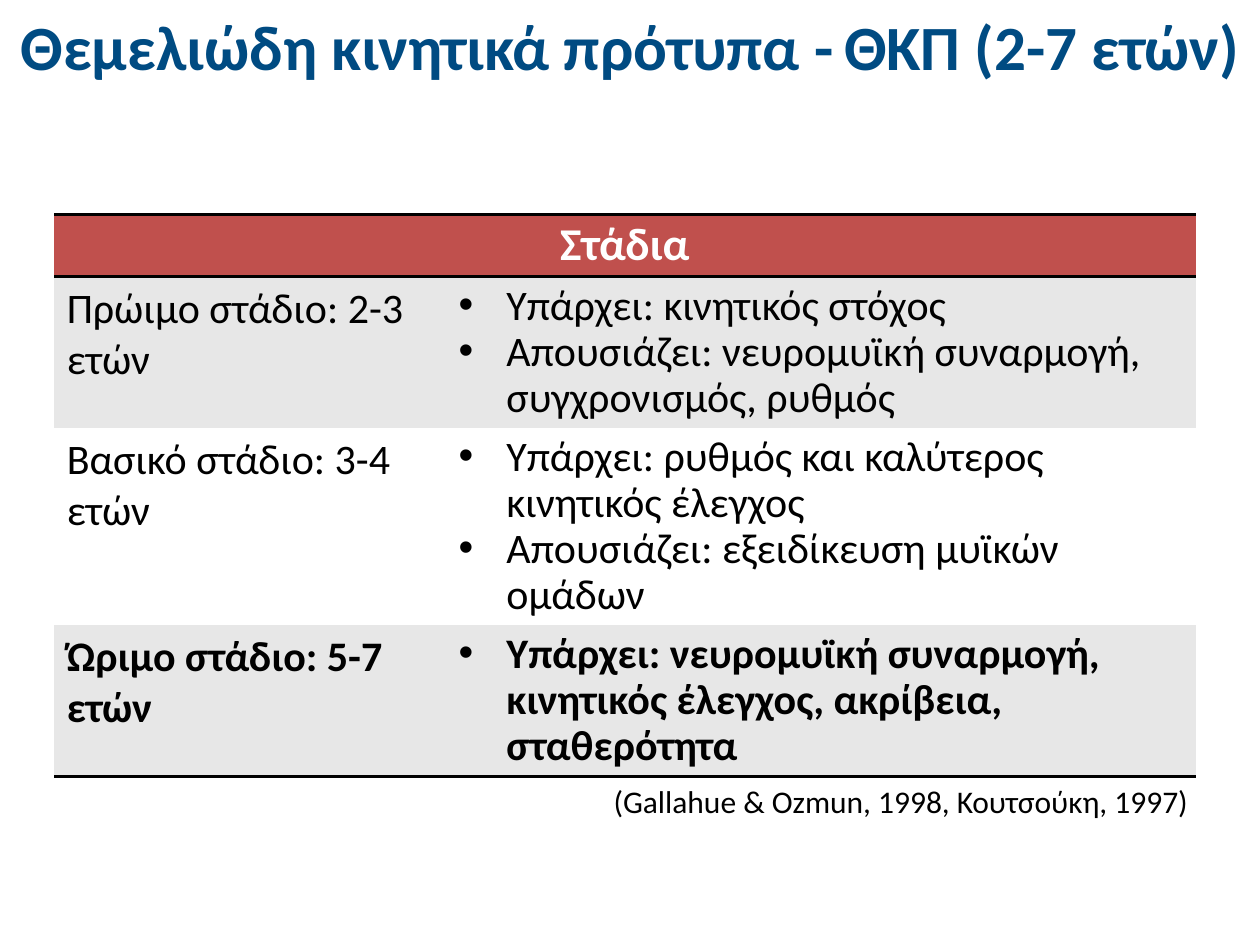
from pptx import Presentation
from pptx.dml.color import RGBColor
from pptx.enum import text as txt
from pptx.oxml import parse_xml
from pptx.oxml.ns import nsdecls
from pptx.util import Inches, Pt

# Content
TITLE = [("Θεμελιώδη κινητικά πρότυπα -", 36), (" ", 25.2), ("ΘΚΠ (2-7 ετών)", 36)]
HEADER = "Στάδια"
STAGES = [
    {"stage": "Πρώιμο στάδιο: 2-3 ετών", "height": 1.05, "traits": [
        "Υπάρχει: κινητικός στόχος",
        "Απουσιάζει: νευρομυϊκή συναρμογή, συγχρονισμός, ρυθμός"]},
    {"stage": "Βασικό στάδιο: 3-4 ετών", "height": 1.37, "traits": [
        "Υπάρχει: ρυθμός και καλύτερος κινητικός έλεγχος",
        "Απουσιάζει: εξειδίκευση μυϊκών ομάδων"]},
    {"stage": "Ώριμο στάδιο: 5-7 ετών", "height": 1.2, "bold": True, "traits": [
        "Υπάρχει: νευρομυϊκή συναρμογή, κινητικός έλεγχος, ακρίβεια, σταθερότητα"]},
]
CITATION = "(Gallahue & Ozmun, 1998, Κουτσούκη, 1997)"

THEME = {
    "font": "Calibri",
    "title": "004B82", "text": "000000", "header_text": "FFFFFF",
    "header_fill": "C0504D", "bands": ("E7E7E7", "FFFFFF"), "rule": "000000",
    "header_size": 26, "cell_size": 24, "citation_size": 18,
    "rule_width": 2, "tight": 0.9, "indent": 0.38,
}
COLUMNS = (3.11, 5.95)
HEADER_HEIGHT = 0.44
PLAIN_TABLE = "{2D5ABB26-0587-4C30-8999-92F81FD0307C}"
ALIGN = txt.PP_ALIGN


def write(frame, paragraphs, *, size=None, color=THEME["text"], bold=False,
          align=ALIGN.LEFT, spacing=None, bullet=False):
    """Each paragraph is a string or a list of (text, size) runs."""
    frame.word_wrap = True
    for i, content in enumerate(paragraphs):
        para = frame.paragraphs[0] if i == 0 else frame.add_paragraph()
        if bullet:
            props = para._p.get_or_add_pPr()
            props.set("marL", str(Inches(THEME["indent"])))
            props.set("indent", str(-Inches(THEME["indent"])))
            props.append(parse_xml(f'<a:buFont {nsdecls("a")} typeface="Arial"/>'))
            props.append(parse_xml(f'<a:buChar {nsdecls("a")} char="•"/>'))
        para.alignment = align
        para.line_spacing = spacing
        para.space_before = Pt(0)
        runs = [(content, size)] if isinstance(content, str) else content
        for words, run_size in runs:
            run = para.add_run()
            run.text = words
            run.font.name = THEME["font"]
            run.font.size = Pt(run_size)
            run.font.bold = bold
            run.font.color.rgb = RGBColor.from_string(color)


def fill_cell(cell, color, edges=""):
    """Fill a cell and rule the given edges, T and/or B in that order."""
    cell.fill.solid()
    cell.fill.fore_color.rgb = RGBColor.from_string(color)
    props = cell._tc.get_or_add_tcPr()
    for place, edge in enumerate(edges):
        props.insert(place, parse_xml(
            f'<a:ln{edge} {nsdecls("a")} w="{Pt(THEME["rule_width"])}">'
            f'<a:solidFill><a:srgbClr val="{THEME["rule"]}"/></a:solidFill>'
            f'</a:ln{edge}>'))


def add_stages(slide):
    heights = [HEADER_HEIGHT] + [stage["height"] for stage in STAGES]
    graphic = slide.shapes.add_table(
        len(heights), len(COLUMNS), Inches(0.43), Inches(1.7),
        Inches(sum(COLUMNS)), Inches(sum(heights)))
    table = graphic.table
    table._tbl.tblPr.find("{*}tableStyleId").text = PLAIN_TABLE
    for column, width in zip(table.columns, COLUMNS):
        column.width = Inches(width)
    for row, height in zip(table.rows, heights):
        row.height = Inches(height)

    # Header across both columns
    header = table.cell(0, 0)
    header.merge(table.cell(0, 1))
    for cell in table.rows[0].cells:
        fill_cell(cell, THEME["header_fill"], "TB")
    write(header.text_frame, [HEADER], size=THEME["header_size"], bold=True,
          color=THEME["header_text"], align=ALIGN.CENTER, spacing=THEME["tight"])

    # One banded row for each stage
    for i, stage in enumerate(STAGES):
        name, traits = table.rows[i + 1].cells
        for cell in (name, traits):
            fill_cell(cell, THEME["bands"][i % 2], "B" if i == len(STAGES) - 1 else "")
        look = {"size": THEME["cell_size"], "bold": stage.get("bold", False)}
        write(name.text_frame, [stage["stage"]], **look)
        write(traits.text_frame, stage["traits"], spacing=THEME["tight"],
              bullet=True, **look)


def main():
    deck = Presentation()
    deck.slide_width, deck.slide_height = Inches(10), Inches(7.5)
    slide = deck.slides.add_slide(deck.slide_layouts[5])

    # Title
    title = slide.shapes.title
    title.left, title.top = Inches(0), Inches(0.13)
    title.width, title.height = Inches(10), Inches(0.99)
    title.text_frame.vertical_anchor = txt.MSO_ANCHOR.TOP
    title.text_frame.margin_top = Inches(0)
    title.text_frame.auto_size = txt.MSO_AUTO_SIZE.NONE
    write(title.text_frame, [TITLE], color=THEME["title"], bold=True,
          align=ALIGN.CENTER, spacing=THEME["tight"])

    add_stages(slide)

    # Citation
    citation = slide.shapes.add_textbox(
        Inches(4.53), Inches(6.19), Inches(5), Inches(0.63))
    write(citation.text_frame, [CITATION], size=THEME["citation_size"],
          align=ALIGN.RIGHT, spacing=THEME["tight"])

    deck.save("out.pptx")


if __name__ == "__main__":
    main()
